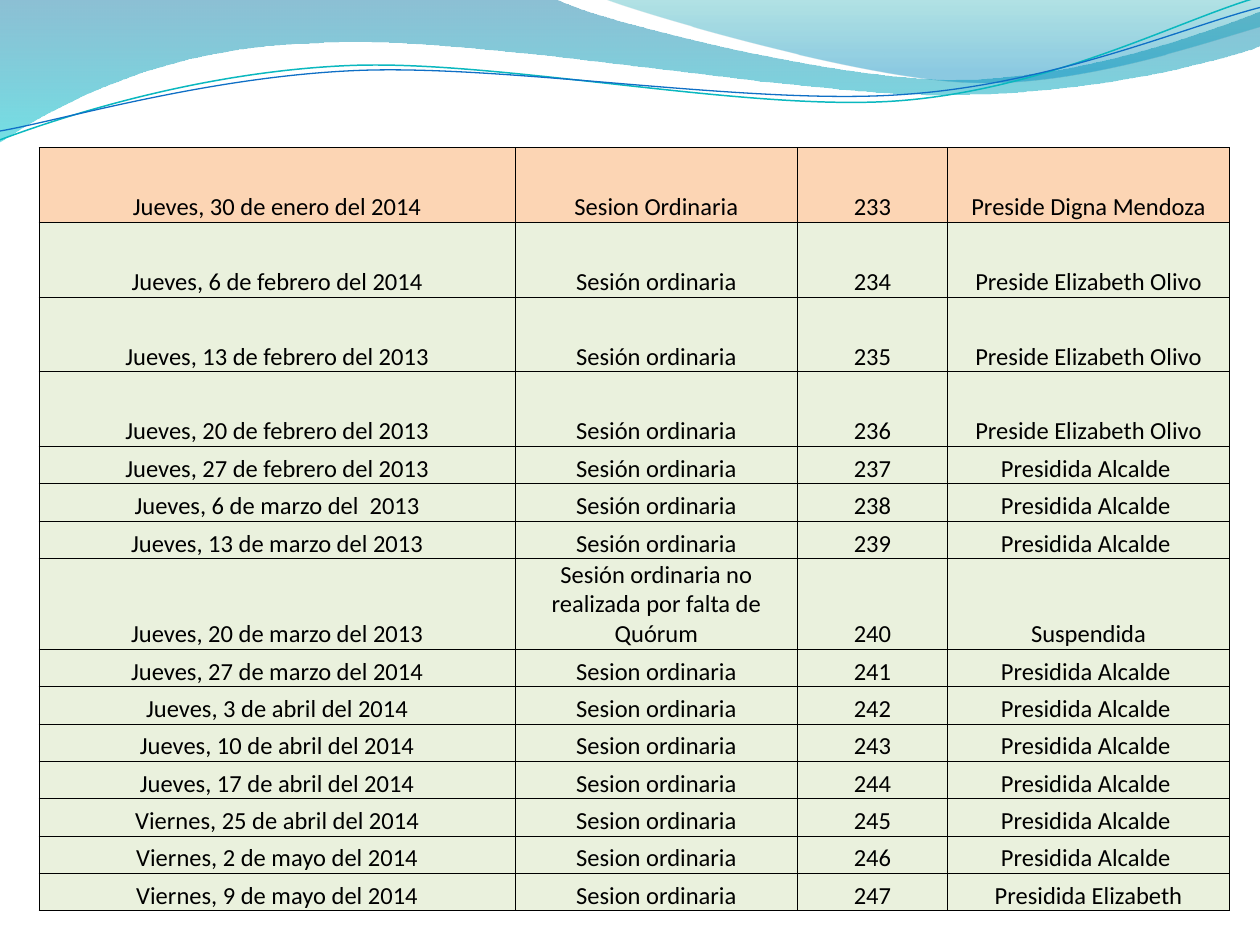
from math import cos, radians, sin
from typing import NamedTuple

from pptx import Presentation
from pptx.dml.color import RGBColor as RGB
from pptx.enum.text import MSO_ANCHOR as ANCHOR, PP_ALIGN as ALIGN
from pptx.oxml import parse_xml
from pptx.oxml.ns import nsdecls, qn
from pptx.oxml.xmlchemy import OxmlElement
from pptx.util import Inches, Pt

COLORS = {
    "blue": "0074A1", "cyan": "00C6CF", "teal": "00A1A9", "sky": "008BBF",
    "teal_line": "0AB8BF", "blue_line": "0F6FC6",
    "peach": "FCD5B4", "green": "EAF1DD", "black": "000000",
}
COL_WIDTHS = [3.78, 2.24, 1.19, 2.24]
SHORT = 5.34 / 18
TALL, WRAPPED = 2 * SHORT, 0.68
FIRST_NUMBER = 233
RIBBON_TILT = 2.7


class Stop(NamedTuple):
    position: float
    color: str
    opacity: int


class Wave(NamedTuple):
    start: tuple
    segments: list
    stops: tuple


class Ribbon(NamedTuple):
    start: tuple
    segments: list
    center: tuple
    color: str
    width: float


class Session(NamedTuple):
    date: str
    kind: str
    chair: str = "Presidida Alcalde "
    height: float = SHORT
    fill: str = "green"


WAVES = [
    Wave((0, 0), [
        (4.4, -0.01),
        (4.76, 0.17, 6.64, 0.63, 7.58, 0.63),
        (8.53, 0.63, 9.58, 0.26, 10, 0.09),
        (10.01, 0.36),
        (9.83, 0.44, 8.7, 0.76, 7.46, 0.75),
        (6.22, 0.75, 3.82, 0.28, 2.57, 0.34),
        (1.29, 0.36, 0.46, 0.83, -0.01, 1.13),
        (0, 0),
    ], (Stop(0, "blue", 45), Stop(1, "cyan", 55))),
    Wave((4.79, -0.01), [
        (5.09, 0.11, 6.82, 0.62, 7.69, 0.65),
        (8.56, 0.69, 9.61, 0.32, 10, 0.21),
        (10, 0),
        (4.79, -0.01),
    ], (Stop(0, "teal", 30), Stop(0.8, "sky", 45))),
]
RIBBONS = [
    Ribbon((0, 1.11), [
        (0.48, 0.93, 1.58, 0.57, 2.77, 0.52),
        (3.95, 0.47, 5.93, 0.89, 7.13, 0.8),
        (8.33, 0.71, 9.38, 0.15, 9.98, -0.02),
    ], (4.99, 0.58), "teal_line", 0.85),
    Ribbon((0, 1.04), [
        (0.47, 0.96, 1.64, 0.61, 2.83, 0.56),
        (4.03, 0.51, 5.97, 0.84, 7.17, 0.75),
        (8.36, 0.67, 9.41, 0.21, 10, 0.06),
    ], (5, 0.59), "blue_line", 0.75),
]
SESSIONS = [
    Session("Jueves, 30 de enero del 2014", "Sesion Ordinaria", "Preside Digna Mendoza", TALL, "peach"),
    Session("Jueves, 6 de febrero del 2014", "Sesión ordinaria", "Preside Elizabeth Olivo", TALL),
    Session("Jueves, 13 de febrero del 2013", "Sesión ordinaria", "Preside Elizabeth Olivo", TALL),
    Session("Jueves, 20 de febrero del 2013", "Sesión ordinaria", "Preside Elizabeth Olivo", TALL),
    Session("Jueves, 27 de febrero del 2013", "Sesión ordinaria"),
    Session("Jueves, 6 de marzo del  2013", "Sesión ordinaria"),
    Session("Jueves, 13 de marzo del 2013", "Sesión ordinaria"),
    Session("Jueves, 20 de marzo del 2013", "Sesión ordinaria no realizada por falta de Quórum",
            "Suspendida", WRAPPED),
    Session("Jueves, 27 de marzo del 2014", "Sesion ordinaria"),
    Session("Jueves, 3 de abril del 2014", "Sesion ordinaria"),
    Session("Jueves, 10 de abril del 2014", "Sesion ordinaria"),
    Session("Jueves, 17 de abril del 2014", "Sesion ordinaria"),
    Session("Viernes, 25 de abril del 2014", "Sesion ordinaria"),
    Session("Viernes, 2 de mayo del 2014", "Sesion ordinaria"),
    Session("Viernes, 9 de mayo del 2014", "Sesion ordinaria", "Presidida Elizabeth"),
]


def rgb(name: str) -> RGB:
    return RGB.from_string(COLORS[name])


def pairs(segment: tuple) -> list:
    return list(zip(segment[::2], segment[1::2]))


def turn(point: tuple, center: tuple, degrees: float) -> tuple:
    a = radians(degrees)
    dx, dy = point[0] - center[0], point[1] - center[1]
    return center[0] + dx * cos(a) - dy * sin(a), center[1] + dx * sin(a) + dy * cos(a)


def add_curve(s, start: tuple, segments: list, close: bool):
    points = [p for segment in segments for p in pairs(segment)]
    builder = s.shapes.build_freeform(Inches(start[0]), Inches(start[1]))
    builder.add_line_segments([(Inches(x), Inches(y)) for x, y in points], close=close)
    sp = builder.convert_to_shape()
    sp.shadow.inherit = False
    lines = iter(list(sp._element.spPr.iter(qn("a:lnTo"))))
    for segment in segments:
        group = [next(lines) for _ in pairs(segment)]
        if len(group) == 3:
            bezier = OxmlElement("a:cubicBezTo")
            group[0].addprevious(bezier)
            for line in group:
                bezier.append(line[0])
                line.getparent().remove(line)
    return sp


def add_wave(s, wave: Wave) -> None:
    sp = add_curve(s, wave.start, wave.segments, True)
    sp.line.fill.background()
    sp.fill.gradient()
    sp.fill.gradient_angle = 270
    for target, stop in zip(sp.fill.gradient_stops, wave.stops):
        target.position = stop.position
        target.color.rgb = rgb(stop.color)
    colors = list(sp._element.spPr.iter(qn("a:srgbClr")))
    for color, stop in zip(colors, wave.stops):
        alpha = OxmlElement("a:alpha")
        alpha.set("val", str(stop.opacity * 1000))
        color.append(alpha)


def add_ribbon(s, ribbon: Ribbon) -> None:
    start = turn(ribbon.start, ribbon.center, RIBBON_TILT)
    segments = [sum((turn(p, ribbon.center, RIBBON_TILT) for p in pairs(segment)), ())
                for segment in ribbon.segments]
    sp = add_curve(s, start, segments, False)
    sp.rotation = 360 - RIBBON_TILT
    sp.fill.background()
    sp.line.color.rgb = rgb(ribbon.color)
    sp.line.width = Pt(ribbon.width)


def format_cell(cell, text: str, fill: str) -> None:
    tc_pr = cell._tc.get_or_add_tcPr()
    for side in "LRTB":
        tc_pr.append(parse_xml(
            f'<a:ln{side} {nsdecls("a")} w="{Pt(0.5)}"><a:solidFill>'
            f'<a:srgbClr val="{COLORS["black"]}"/></a:solidFill></a:ln{side}>'))
    cell.fill.solid()
    cell.fill.fore_color.rgb = rgb(fill)
    cell.margin_left = cell.margin_right = cell.margin_top = Inches(0.01)
    cell.margin_bottom = 0
    cell.vertical_anchor = ANCHOR.BOTTOM
    cell.text = text
    p = cell.text_frame.paragraphs[0]
    p.alignment = ALIGN.CENTER
    p.font.name = "Calibri"
    p.font.size = Pt(14)
    p.font.color.rgb = rgb("black")


def add_sessions(s, sessions: list) -> None:
    height = sum(session.height for session in sessions)
    table = s.shapes.add_table(
        len(sessions), len(COL_WIDTHS), Inches(0.31), Inches(1.17),
        Inches(sum(COL_WIDTHS)), Inches(height)).table
    table.first_row = table.horz_banding = False
    for column, width in zip(table.columns, COL_WIDTHS):
        column.width = Inches(width)
    for i, (row, session) in enumerate(zip(table.rows, sessions)):
        row.height = Inches(session.height)
        texts = (session.date, session.kind, str(FIRST_NUMBER + i), session.chair)
        for cell, text in zip(row.cells, texts):
            format_cell(cell, text, session.fill)


def main() -> None:
    prs = Presentation()
    prs.slide_width, prs.slide_height = Inches(10), Inches(7.5)
    s = prs.slides.add_slide(prs.slide_layouts[6])
    for wave in WAVES:
        add_wave(s, wave)
    for ribbon in RIBBONS:
        add_ribbon(s, ribbon)
    add_sessions(s, SESSIONS)
    prs.save("out.pptx")


if __name__ == "__main__":
    main()
